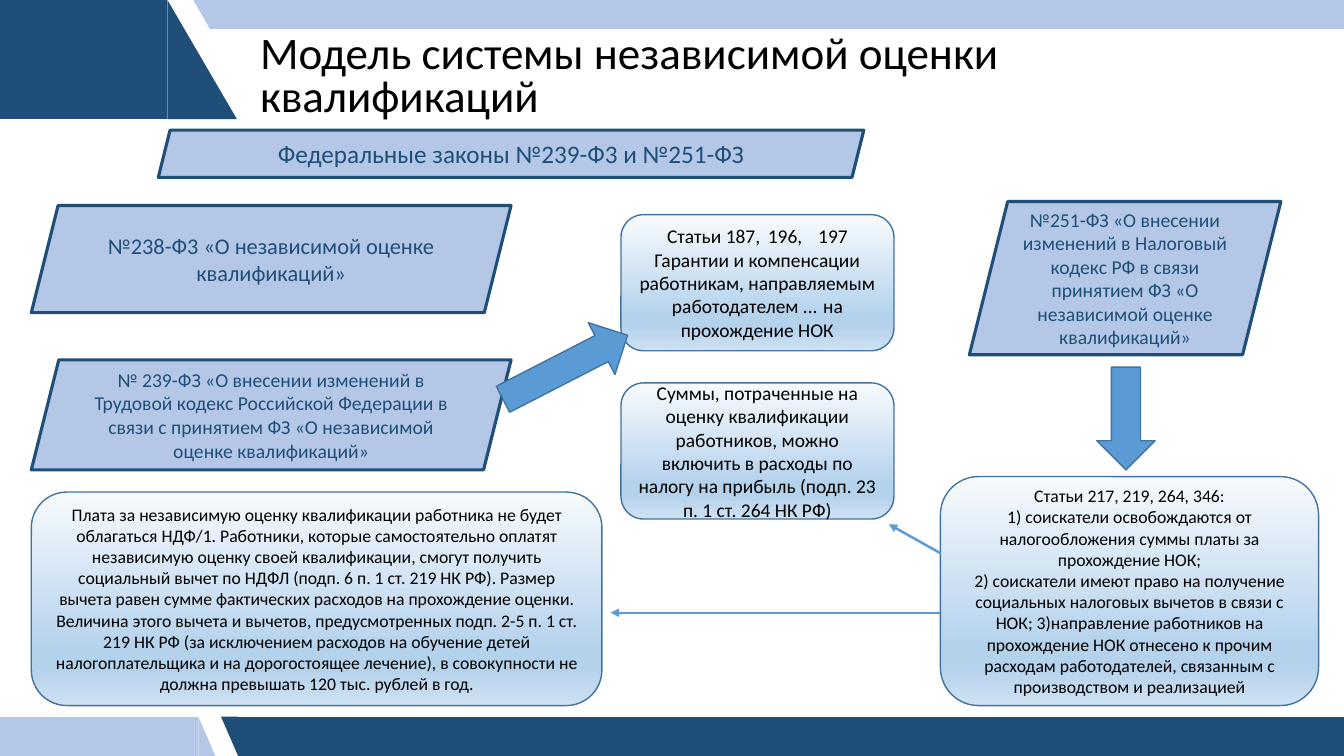
from lxml import etree
from pptx import Presentation
from pptx import util as u
from pptx.dml.color import RGBColor
from pptx.enum import shapes, text
from pptx.oxml.ns import qn

Cm = u.Cm
Kind = shapes.MSO_SHAPE
NAVY = RGBColor(0x1F, 0x4E, 0x79)
PALE = RGBColor(0xB4, 0xC7, 0xE7)
BLUE = RGBColor(0x5B, 0x9B, 0xD5)
EDGE = RGBColor(0x43, 0x73, 0x9E)
BLACK = RGBColor(0, 0, 0)
STOPS = [(0, "F7FAFD"), (74, "B5D2EC"), (83, "B5D2EC"), (100, "CEE1F2")]
FONT = "Calibri"

WIDE, HIGH = 33.87, 19.05
FOOT = 18.06  # top of the footer band
SLANT = 0.43  # width of the small triangles

LAWS = [
    ((3.99, 3.28, 17.78, 1.19), 18, "Федеральные законы №239-Ф3 и №251-ФЗ"),
    ((0.79, 5.18, 12.09, 2.7), 16,
     "№238-Ф3 «О независимой оценке квалификаций»"),
    ((24.43, 5.08, 7.85, 3.86), 14,
     "№251-ФЗ «О внесении изменений в Налоговый кодекс РФ в связи принятием "
     "ФЗ «О независимой оценке квалификаций»"),
    ((0.79, 9.07, 12.09, 2.77), 14,
     "№ 239-ФЗ «О внесении изменений в Трудовой кодекс Российской Федерации "
     "в связи с принятием ФЗ «О независимой оценке квалификаций»"),
]

NOTES = [
    ((15.65, 5.41, 6.88, 3.43), 13.9,
     "Статьи 187,\t196,\t197\n"
     "Гарантии и компенсации работникам, направляемым работодателем ...\tна\n"
     "прохождение НОК"),
    ((15.65, 9.65, 6.88, 3.43), 13.9,
     "Суммы, потраченные на оценку квалификации работников, можно включить "
     "в расходы по налогу на прибыль (подп. 23 п. 1 ст. 264 НК РФ)"),
    ((0.79, 12.4, 14.38, 5.38), 12.6,
     "Плата за независимую оценку квалификации работника не будет облагаться "
     "НДФ/1. Работники, которые самостоятельно оплатят независимую оценку "
     "своей квалификации, смогут получить социальный вычет по НДФЛ (подп. 6 "
     "п. 1 ст. 219 НК РФ). Размер вычета равен сумме фактических расходов на "
     "прохождение оценки. Величина этого вычета и вычетов, предусмотренных "
     "подп. 2-5 п. 1 ст. 219 НК РФ (за исключением расходов на обучение детей "
     "налогоплательщика и на дорогостоящее лечение), в совокупности не должна "
     "превышать 120 тыс. рублей в год."),
    ((23.7, 12.01, 9.53, 5.77), 12.6,
     "Статьи 217, 219, 264, 346:\n"
     "1) соискатели освобождаются от налогообложения суммы платы за "
     "прохождение НОК;\n"
     "2) соискатели имеют право на получение социальных налоговых вычетов "
     "в связи с НОК; 3)направление работников на прохождение НОК отнесено "
     "к прочим расходам работодателей, связанным с производством "
     "и реализацией"),
]


class Deck:
    """Holds the presentation, its style and the current slide."""

    def __init__(self):
        self.prs = Presentation()
        self.prs.slide_width, self.prs.slide_height = Cm(WIDE), Cm(HIGH)
        self.slide = self.prs.slides.add_slide(self.prs.slide_layouts[5])

    def style(self, frame, size, color, align):
        frame.word_wrap = True
        frame.vertical_anchor = text.MSO_ANCHOR.MIDDLE
        for para in frame.paragraphs:
            para.alignment = align
            for run in para.runs:
                run.font.name, run.font.size = FONT, u.Pt(size)
                run.font.color.rgb = color

    def title(self, box, words, size):
        head = self.slide.shapes.title
        head.left, head.top, head.width, head.height = map(Cm, box)
        head.text_frame.text = words
        self.style(head.text_frame, size, BLACK, text.PP_ALIGN.LEFT)
        head.text_frame.paragraphs[0].line_spacing = 0.8

    def shape(self, kind, box, fill=None, line=None, width=1, turn=0):
        item = self.slide.shapes.add_shape(kind, *map(Cm, box))
        item.shadow.inherit = False
        item.rotation = turn
        if fill is not None:
            item.fill.solid()
            item.fill.fore_color.rgb = fill
        if line is None:
            item.line.fill.background()
        else:
            item.line.color.rgb = line
            item.line.width = u.Pt(width)
        return item

    def band(self, box, fill):
        self.shape(Kind.FLOWCHART_PROCESS, box, fill)

    def wedge(self, box, fill, turn=0):
        self.shape(Kind.RIGHT_TRIANGLE, box, fill, turn=turn)

    def law(self, box, size, words):
        item = self.shape(Kind.PARALLELOGRAM, box, PALE, NAVY, 2.25)
        item.text_frame.text = words
        self.style(item.text_frame, size, NAVY, text.PP_ALIGN.CENTER)

    def note(self, box, size, words):
        item = self.shape(Kind.ROUNDED_RECTANGLE, box, line=EDGE)
        item.fill.gradient()
        item.fill.gradient_angle = 270
        stops = item._element.spPr.find(qn("a:gradFill")).find(qn("a:gsLst"))
        for old in list(stops):
            stops.remove(old)
        for place, tone in STOPS:
            stop = etree.SubElement(stops, qn("a:gs"), pos=str(place * 1000))
            etree.SubElement(stop, qn("a:srgbClr"), val=tone)
        item.text_frame.text = words
        self.style(item.text_frame, size, BLACK, text.PP_ALIGN.CENTER)

    def arrow(self, box, turn):
        self.shape(Kind.UP_ARROW, box, BLUE, EDGE, turn=turn)

    def link(self, ends, width):
        """Draw a thin line with an arrowhead at its far end."""
        line = self.slide.shapes.add_connector(
            shapes.MSO_CONNECTOR.STRAIGHT, *map(Cm, ends))
        line.line.color.rgb = BLUE
        line.line.width = u.Pt(width)
        etree.SubElement(line.line._get_or_add_ln(), qn("a:tailEnd"),
                         type="triangle")
        etree.SubElement(line._element.spPr, qn("a:effectLst"))


def main():
    deck = Deck()
    foot = HIGH - FOOT
    deck.band((6, FOOT, WIDE - 6, foot), NAVY)
    deck.wedge((6 - SLANT, FOOT, SLANT, foot), NAVY, 180)
    deck.band((0, FOOT, 5, foot), PALE)
    deck.wedge((5, FOOT, SLANT, foot), PALE)
    deck.band((5.3, 0, WIDE - 5.3, 0.74), PALE)
    deck.wedge((5.3 - SLANT, 0, SLANT, 0.74), PALE, 180)
    deck.band((0, 0, 4.22, 3), NAVY)
    deck.wedge((4.22, 0, 1.75, 3), NAVY)

    deck.title((6.3, 0.74, 25.43, 2.46),
               "Модель системы независимой оценки квалификаций", 32.2)
    for law in LAWS:
        deck.law(*law)
    for note in NOTES:
        deck.note(*note)
    deck.arrow((13.51, 7.49, 1.47, 3.53), 62.8)
    deck.arrow((27.64, 9.25, 1.47, 2.59), 180)
    deck.link((23.7, 13.94, 22.4, 13.21), 1.75)
    deck.link((23.7, 15.44, 15.39, 15.44), 1.5)
    deck.prs.save("out.pptx")


if __name__ == "__main__":
    main()
